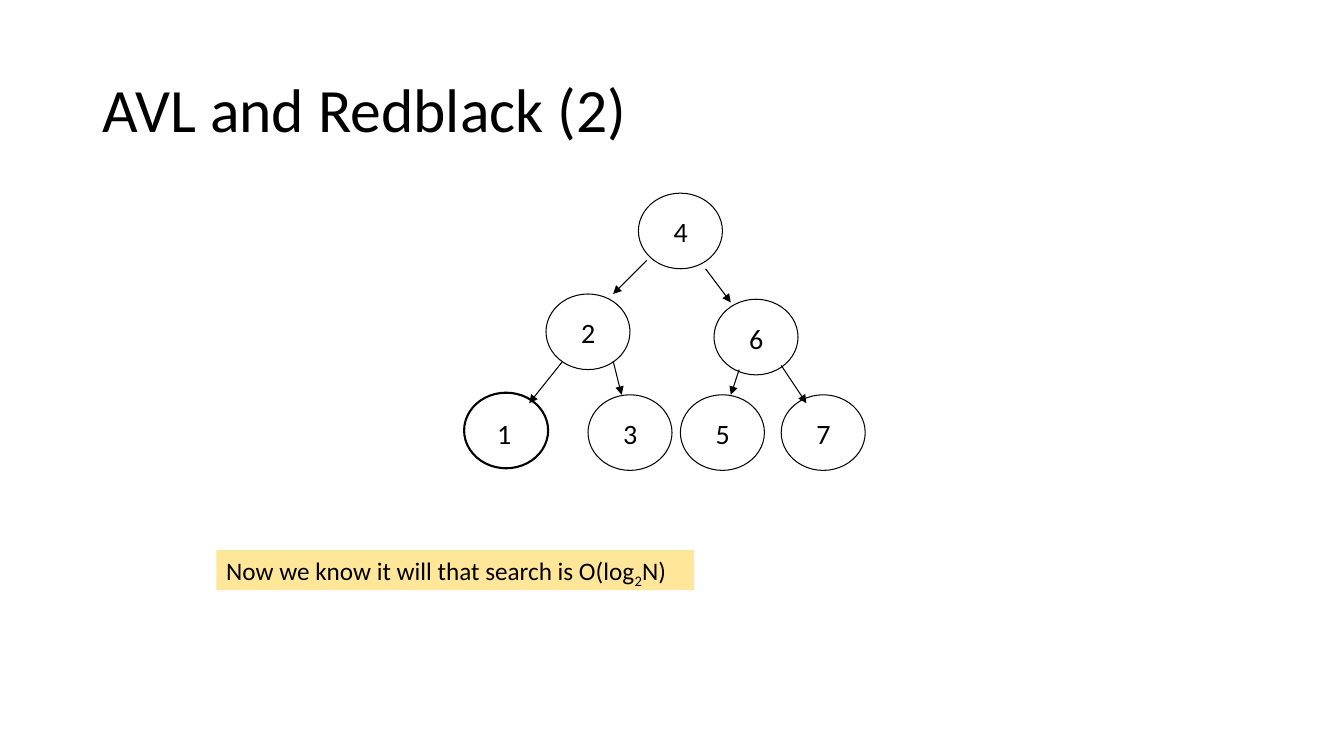
from lxml import etree
from pptx import Presentation
from pptx import util as u
from pptx.dml.color import RGBColor
from pptx.enum import shapes, text
from pptx.oxml import ns

PX = 9525
BLACK = RGBColor(0x00, 0x00, 0x00)
SAND = RGBColor(0xFF, 0xE6, 0x99)
FACE = "Calibri"
NODE = (80, 72)
RING = {"width": u.Pt(0.75)}
BOLD = {"width": u.Pt(1.5)}
NODES = [
    ("4", 168, 0), ("2", 80, 96), ("6", 240, 101),
    ("1", 0, 192), ("3", 120, 192), ("5", 208, 192), ("7", 304, 192),
]
EDGES = [
    (176, 64, 144, 96), (232, 72, 256, 104),
    (96, 160, 64, 200), (144, 160, 152, 192),
    (264, 168, 256, 192), (304, 164, 328, 200),
]


def emu(*vals):
    return [u.Emu(v * PX) for v in vals]


def put(obj, vals):
    for key, val in vals.items():
        setattr(obj, key, val)


def write(para, words, size):
    run = para.add_run()
    run.text = words
    put(run.font, {"name": FACE, "size": u.Pt(size)})
    run.font.color.rgb = BLACK
    return run


def label(slide, box, wrap):
    shape = slide.shapes.add_textbox(*emu(*box))
    put(shape.text_frame, {
        "word_wrap": wrap,
        "auto_size": text.MSO_AUTO_SIZE.SHAPE_TO_FIT_TEXT,
    })
    return shape


def title(slide, box):
    shape = slide.shapes.title
    put(shape, dict(zip(("left", "top", "width", "height"), emu(*box))))
    put(shape.text_frame, {"vertical_anchor": text.MSO_ANCHOR.MIDDLE})
    para = shape.text_frame.paragraphs[0]
    put(para, {"alignment": text.PP_ALIGN.LEFT, "line_spacing": 0.9})
    write(para, "AVL and Redblack (2)", 44)


def node(slide, name, x, y):
    first = name == "1"
    dx, dy = (2, -2) if first else (0, 0)
    ring = slide.shapes.add_shape(
        shapes.MSO_SHAPE.OVAL, *emu(x + dx, y + dy, *NODE))
    ring.shadow.inherit = False
    ring.fill.background()
    ring.line.color.rgb = BLACK
    put(ring.line, BOLD if first else RING)
    tag = label(slide, (x + 24, y + 16, 33, 42), False)
    write(tag.text_frame.paragraphs[0], name, 20)


def edge(slide, x1, y1, x2, y2):
    line = slide.shapes.add_connector(
        shapes.MSO_CONNECTOR.STRAIGHT, *emu(x1, y1, x2, y2))
    line.line.color.rgb = BLACK
    put(line.line, RING)
    etree.SubElement(
        line.line._get_or_add_ln(), ns.qn("a:tailEnd"), type="triangle")
    etree.SubElement(line._element.spPr, ns.qn("a:effectLst"))


def tree(slide, box):
    left, top = box[:2]
    for name, x, y in NODES:
        node(slide, name, left + x, top + y)
    for x1, y1, x2, y2 in EDGES:
        edge(slide, left + x1, top + y1, left + x2, top + y2)


def note(slide, box):
    shape = label(slide, box, True)
    shape.fill.solid()
    shape.fill.fore_color.rgb = SAND
    para = shape.text_frame.paragraphs[0]
    write(para, "Now we know it will that search is O(log", 18)
    low = write(para, "2", 18)
    low._r.get_or_add_rPr().set("baseline", "-25000")
    write(para, "N)", 18)


def main():
    deck = Presentation()
    put(deck, dict(zip(("slide_width", "slide_height"), emu(1280, 720))))
    slide = deck.slides.add_slide(deck.slide_layouts[5])
    title(slide, (88, 38, 1104, 139))
    tree(slide, (440, 184, 384, 264))
    note(slide, (206, 524, 455, 38))
    deck.save("out.pptx")


if __name__ == "__main__":
    main()
